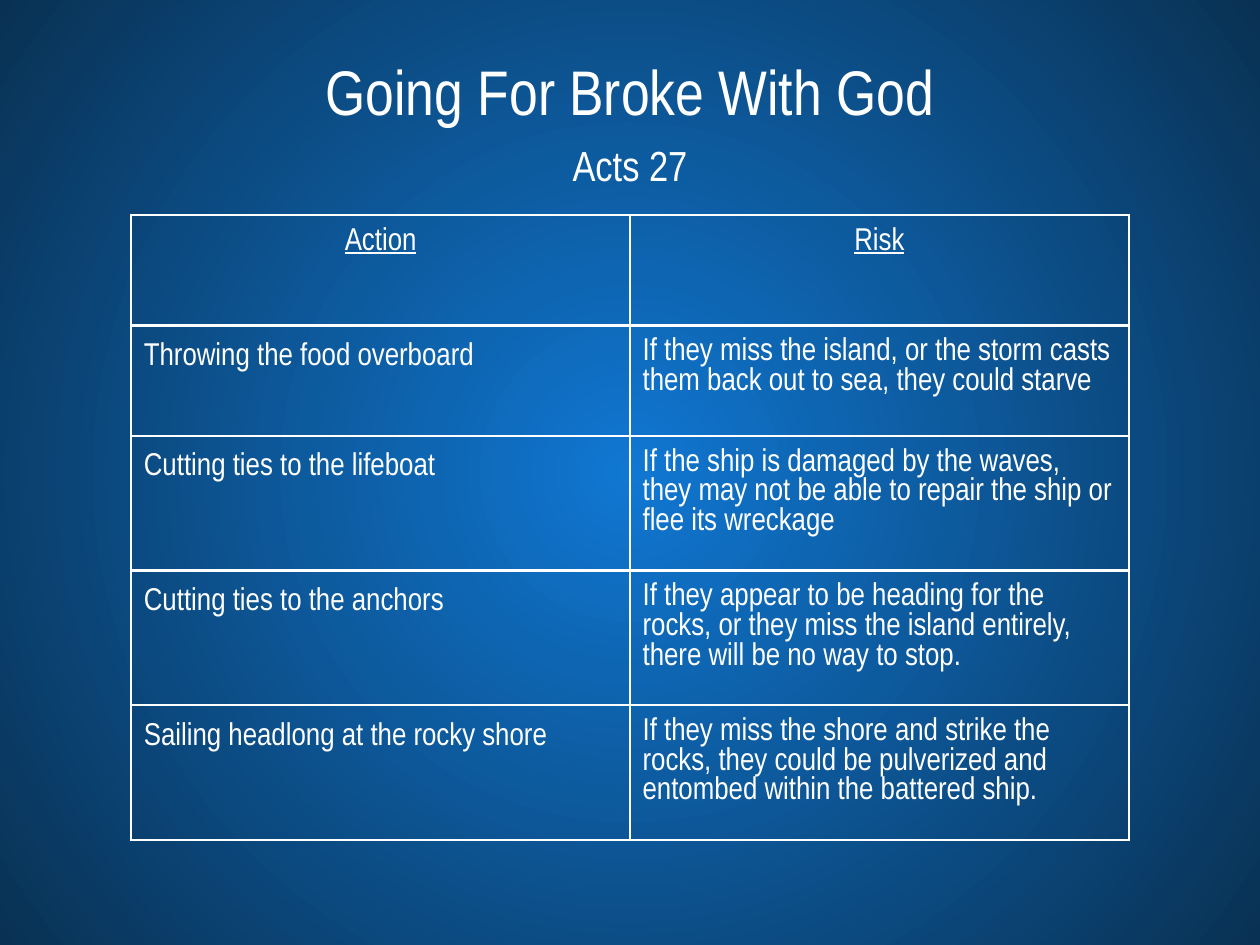
from lxml import etree
from pptx import Presentation
from pptx.dml.color import RGBColor as RGB
from pptx.enum.text import MSO_ANCHOR, MSO_AUTO_SIZE, PP_ALIGN
from pptx.oxml.ns import qn
from pptx.util import Pt

COLORS = {"white": "FFFFFF", "center": "1077D2", "edge": "093153"}
FONT = "Arial Narrow"
ROWS = [
    ("Action", "Risk"),
    ("Throwing the food overboard",
     "If they miss the island, or the storm casts them back out to sea, they could starve"),
    ("Cutting ties to the lifeboat",
     "If the ship is damaged by the waves, they may not be able to repair the ship or flee its wreckage"),
    ("Cutting ties to the anchors",
     "If they appear to be heading for the rocks, or they miss the island entirely, "
     "there will be no way to stop."),
    ("Sailing headlong at the rocky shore",
     "If they miss the shore and strike the rocks, they could be pulverized and "
     "entombed within the battered ship."),
]
HEIGHTS = [63, 63, 77, 77, 77]
COL_WIDTH = 285


def style(p, size):
    p.font.name = FONT
    p.font.size = Pt(size)
    p.font.color.rgb = RGB.from_string(COLORS["white"])


def add_borders(cell):
    tcPr = cell._tc.get_or_add_tcPr()
    for i, side in enumerate(("lnL", "lnR", "lnT", "lnB")):
        ln = etree.Element(qn(f"a:{side}"), w=str(Pt(1.5)))
        fill = etree.SubElement(ln, qn("a:solidFill"))
        etree.SubElement(fill, qn("a:srgbClr"), val=COLORS["white"])
        tcPr.insert(i, ln)


prs = Presentation()
prs.slide_width, prs.slide_height = Pt(720), Pt(540)
s = prs.slides.add_slide(prs.slide_layouts[5])

fill = s.background.fill
fill.gradient()
for stop, name in zip(fill.gradient_stops, ("center", "edge")):
    stop.color.rgb = RGB.from_string(COLORS[name])
grad = s._element.find(".//" + qn("a:gradFill"))
grad.remove(grad.find(qn("a:lin")))
radial = etree.SubElement(grad, qn("a:path"), path="circle")
etree.SubElement(radial, qn("a:fillToRect"), l="50000", t="50000", r="50000", b="50000")

title = s.shapes.title
title.left, title.top, title.width, title.height = Pt(24.5), Pt(12.25), Pt(671), Pt(79.25)
tf = title.text_frame
tf.text = "Going For Broke With God\nActs 27"
tf.auto_size = MSO_AUTO_SIZE.NONE
tf.vertical_anchor = MSO_ANCHOR.TOP
tf.margin_left = tf.margin_right = Pt(7.2)
tf.margin_top, tf.margin_bottom = Pt(18), Pt(0)
for p, size, gap in zip(tf.paragraphs, (36, 24), (0, 6)):
    style(p, size)
    p.alignment = PP_ALIGN.CENTER
    p.space_before = Pt(gap)

table = s.shapes.add_table(len(ROWS), 2, Pt(75), Pt(123), Pt(2 * COL_WIDTH), Pt(sum(HEIGHTS))).table
table.first_row = table.horz_banding = False
for col in table.columns:
    col.width = Pt(COL_WIDTH)
for i, (texts, height) in enumerate(zip(ROWS, HEIGHTS)):
    table.rows[i].height = Pt(height)
    for j, text in enumerate(texts):
        cell = table.cell(i, j)
        cell.text = text
        cell.fill.background()
        cell.margin_left = cell.margin_right = cell.margin_top = cell.margin_bottom = Pt(7.2)
        add_borders(cell)
        p = cell.text_frame.paragraphs[0]
        style(p, 18)
        if i == 0:
            p.alignment = PP_ALIGN.CENTER
            p.font.underline = True
        elif j == 0:
            p.line_spacing = 1.15

prs.save("out.pptx")
